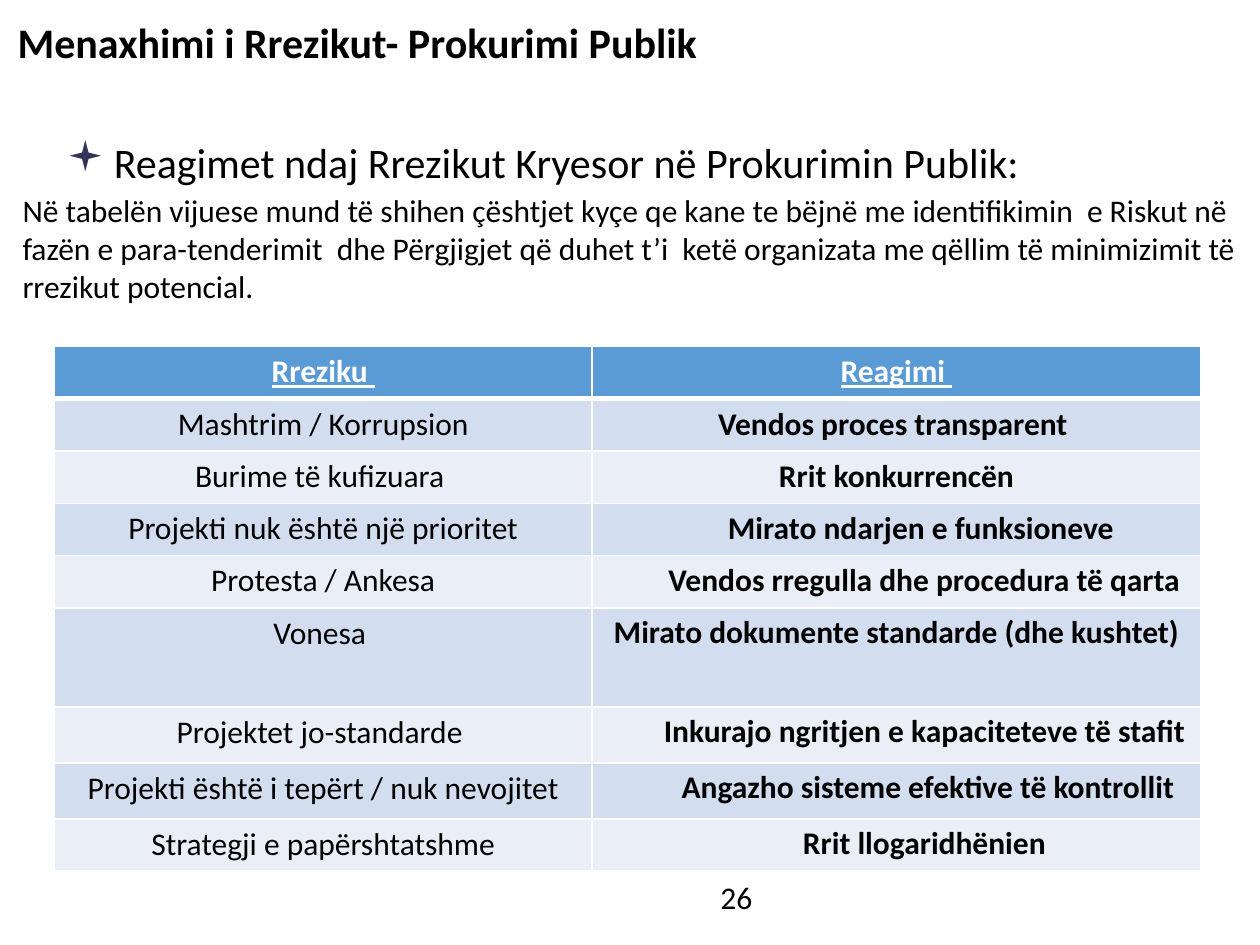
from lxml.etree import SubElement as Sub
from pptx import Presentation
from pptx.dml.color import RGBColor as Rgb
from pptx.enum.text import PP_ALIGN as Align
from pptx.oxml.ns import qn
from pptx.util import Pt

FONT = "Calibri"
HUE = {"ink": "000000", "paper": "FFFFFF", "head": "5B9BD5",
       "dark": "D2DEEF", "light": "EAEFF7", "mark": "33335A"}

INTRO = ("Në tabelën vijuese mund të shihen çështjet kyçe qe kane te bëjnë me "
         "identifikimin  e Riskut në fazën e para-tenderimit  dhe Përgjigjet që "
         "duhet t’i  ketë organizata me qëllim të minimizimit të rrezikut potencial.")

COLS = (307.4, 347.8)
ROW = 29.9
HEAD = ("Rreziku ", "Reagimi ")
# risk, response, row height, indent of the response (None: normal cell margins)
RISKS = [
    ("Mashtrim / Korrupsion", "Vendos proces transparent ", ROW, None),
    ("Burime të kufizuara ", "Rrit konkurrencën", ROW, None),
    ("Projekti nuk është një prioritet", "Mirato ndarjen e funksioneve ", ROW, 32),
    ("Protesta / Ankesa", "Vendos rregulla dhe procedura të qarta", ROW, 32),
    ("Vonesa ", "Mirato dokumente standarde (dhe kushtet)", 56.6, 0),
    ("Projektet jo-standarde ", "Inkurajo ngritjen e kapaciteteve të stafit", 32, 32),
    ("Projekti është i tepërt / nuk nevojitet",
     "Angazho sisteme efektive të kontrollit", 32, 36),
    ("Strategji e papërshtatshme", "Rrit llogaridhënien ", ROW, 36),
]


def style(par, size, hue="ink", bold=False, line=False):
    for run in par.runs:
        font = run.font
        font.name, font.size = FONT, Pt(size)
        font.bold, font.underline = bold, line
        font.color.rgb = Rgb.from_string(HUE[hue])


def add_text(slide, box, text, size, bold=False, wrap=True):
    frame = slide.shapes.add_textbox(*map(Pt, box)).text_frame
    frame.word_wrap = wrap
    frame.text = text
    par = frame.paragraphs[0]
    style(par, size, bold=bold)
    return par


def add_bullet(slide, box, text):
    par = add_text(slide, box, text, 24)
    par.line_spacing = 1.5
    prop = par._p.get_or_add_pPr()
    prop.set("marL", str(Pt(27)))
    prop.set("indent", str(-Pt(27)))
    Sub(Sub(prop, qn("a:buClr")), qn("a:srgbClr"), val=HUE["mark"])
    Sub(prop, qn("a:buFont"), typeface="Wingdings")
    Sub(prop, qn("a:buChar"), char="▪")


def edge(cell, widths):
    """Draw white borders; widths are left, right, top, bottom in points."""
    prop = cell._tc.get_or_add_tcPr()
    for side, width in zip("LRTB", widths):
        line = Sub(prop, qn(f"a:ln{side}"), w=str(Pt(width)))
        Sub(Sub(line, qn("a:solidFill")), qn("a:srgbClr"), val=HUE["paper"])


def fill_cell(cell, text, back, widths, **look):
    edge(cell, widths)
    cell.fill.solid()
    cell.fill.fore_color.rgb = Rgb.from_string(HUE[back])
    cell.text_frame.text = text
    par = cell.text_frame.paragraphs[0]
    par.alignment = Align.CENTER
    style(par, 18, **look)
    return par


def add_risks(slide, box):
    table = slide.shapes.add_table(len(RISKS) + 1, len(COLS), *map(Pt, box)).table
    for col, width in zip(table.columns, COLS):
        col.width = Pt(width)
    table.rows[0].height = Pt(ROW)
    for num, text in enumerate(HEAD):
        fill_cell(table.cell(0, num), text, "head", (1, 1, 1, 3),
                  hue="paper", bold=True, line=True)
    for num, (risk, reply, height, indent) in enumerate(RISKS, 1):
        table.rows[num].height = Pt(height)
        back = "dark" if num % 2 else "light"
        widths = (1, 1, 3 if num == 1 else 1, 1)
        fill_cell(table.cell(num, 0), risk, back, widths)
        cell = table.cell(num, 1)
        par = fill_cell(cell, reply, back, widths, bold=True)
        if indent is not None:
            cell.margin_left = Pt(indent)
            cell.margin_right = cell.margin_top = cell.margin_bottom = 0
            par.line_spacing = 1.15


def main():
    deck = Presentation()
    deck.slide_width, deck.slide_height = Pt(720), Pt(540)
    slide = deck.slides.add_slide(deck.slide_layouts[6])
    add_text(slide, (404.6, 498.2, 46, 29), "26", 18, wrap=False)
    add_text(slide, (3, 5.8, 720, 36), "Menaxhimi i Rrezikut- Prokurimi Publik",
             24, bold=True)
    add_bullet(slide, (31, 59.8, 663, 51),
               "Reagimet ndaj Rrezikut Kryesor në Prokurimin Publik:")
    add_risks(slide, (31, 198, sum(COLS), 300))
    add_text(slide, (5.8, 105.8, 720, 73), INTRO, 18)
    deck.save("out.pptx")


if __name__ == "__main__":
    main()
